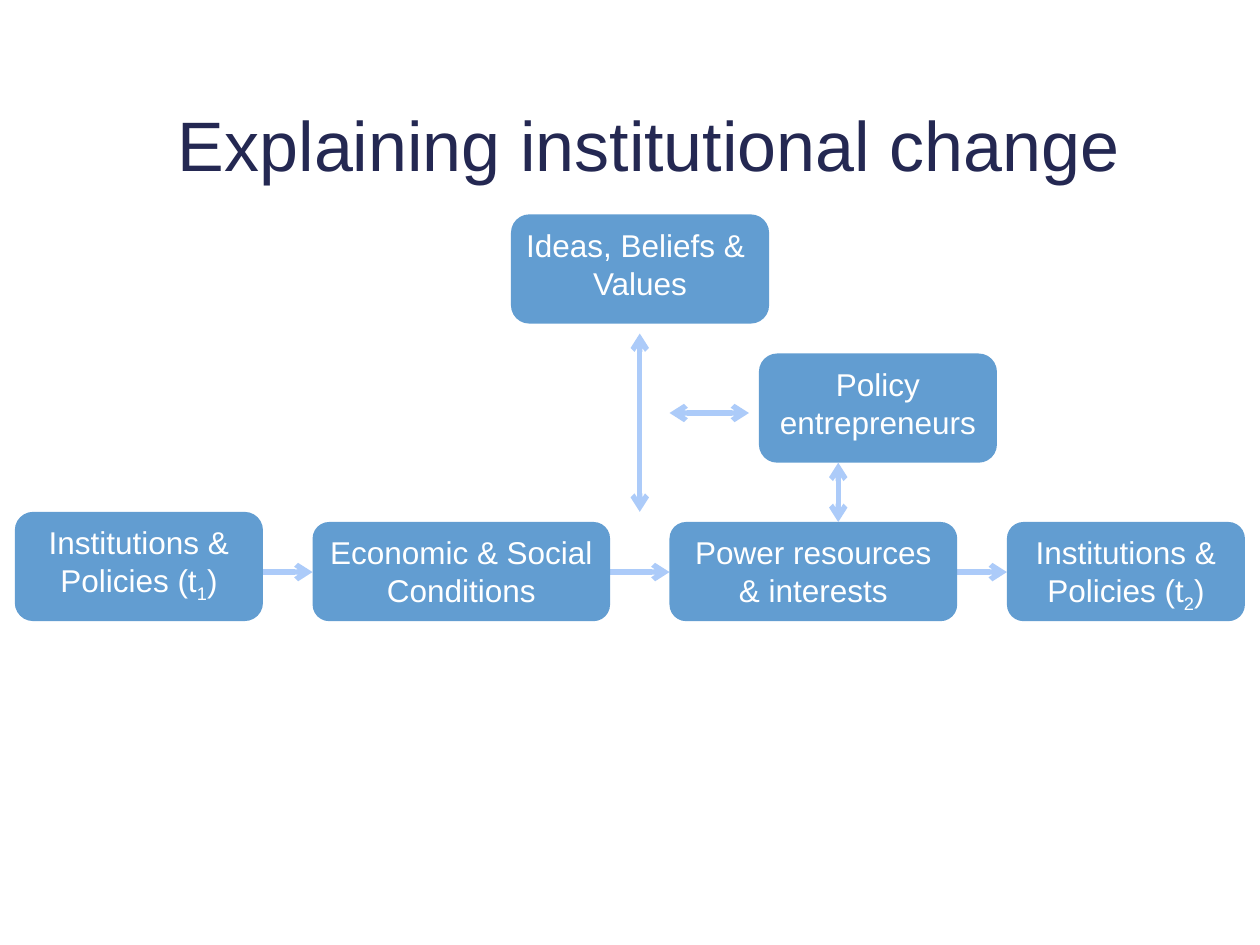
from lxml.etree import SubElement
from pptx import Presentation
from pptx.dml.color import RGBColor
from pptx.enum.shapes import MSO_CONNECTOR, MSO_SHAPE
from pptx.enum.text import MSO_ANCHOR, PP_ALIGN
from pptx.oxml.ns import qn
from pptx.util import Pt


def color(code):
    return RGBColor.from_string(code)


class Board:
    face = "Arial"
    navy = "242852"
    blue = "629DD1"
    pale = "ACCBF9"
    white = "FFFFFF"

    def __init__(self, slide):
        self.slide = slide

    def style(self, para, size, code):
        para.alignment = PP_ALIGN.CENTER
        for run in para.runs:
            run.font.name = self.face
            run.font.size = Pt(size)
            run.font.color.rgb = color(code)

    def frame(self, shape, anchor):
        frame = shape.text_frame
        frame.word_wrap = True
        frame.vertical_anchor = anchor
        frame.margin_left = frame.margin_right = Pt(5)
        frame.margin_top = frame.margin_bottom = Pt(3.6)
        return frame

    def title(self, text, *rect):
        shape = self.slide.shapes.add_textbox(*map(Pt, rect))
        frame = self.frame(shape, MSO_ANCHOR.MIDDLE)
        frame.text = text
        self.style(frame.paragraphs[0], 40, self.navy)

    def box(self, text, *rect, sub=None):
        shape = self.slide.shapes.add_shape(MSO_SHAPE.ROUNDED_RECTANGLE, *map(Pt, rect))
        shape.shadow.inherit = False
        shape.adjustments[0] = 0.167
        shape.fill.solid()
        shape.fill.fore_color.rgb = color(self.blue)
        shape.line.fill.background()
        frame = self.frame(shape, MSO_ANCHOR.TOP)
        frame.text = text
        if sub:
            para = frame.paragraphs[0]
            low = para.add_run()
            low.text = sub
            low.font._element.set("baseline", "-25000")
            para.add_run().text = ")"
        for para in frame.paragraphs:
            self.style(para, 18, self.white)

    def arrow(self, *ends, both=False):
        link = self.slide.shapes.add_connector(MSO_CONNECTOR.STRAIGHT, *map(Pt, ends))
        link.line.color.rgb = color(self.pale)
        link.line.width = Pt(3)
        line = link.line._get_or_add_ln()
        if both:
            SubElement(line, qn("a:headEnd"), type="arrow")
        SubElement(line, qn("a:tailEnd"), type="arrow")
        SubElement(link._element.spPr, qn("a:effectLst"))


def main():
    deck = Presentation()
    deck.slide_width, deck.slide_height = Pt(720), Pt(540)
    board = Board(deck.slides.add_slide(deck.slide_layouts[6]))

    board.title("Explaining institutional change", 70.5, 49, 600, 66)

    mid = 326.9
    for start, end in ((348.6, 382.6), (144.8, 178.6), (535.7, 575.4)):
        board.arrow(start, mid, end, mid)

    tall = 62.4
    board.box("Ideas, Beliefs & \nValues", 292, 122.5, 147.5, tall)
    board.box("Policy entrepreneurs", 433.7, 202, 136, tall)
    board.box("Institutions & Policies (t", 8.5, 292.5, 141.8, tall, sub="1")

    top, low = 298.3, 56.7
    board.box("Economic & Social Conditions", 178.6, top, 170, low)
    board.box("Power resources & interests", 382.6, top, 164.4, low)
    board.box("Institutions & Policies (t", 575.4, top, 136, low, sub="2")

    board.arrow(365.6, 190.6, 365.6, 292.5, both=True)
    board.arrow(382.6, 236, 428, 236, both=True)
    board.arrow(479, 264.4, 479, top, both=True)

    deck.save("out.pptx")


if __name__ == "__main__":
    main()
